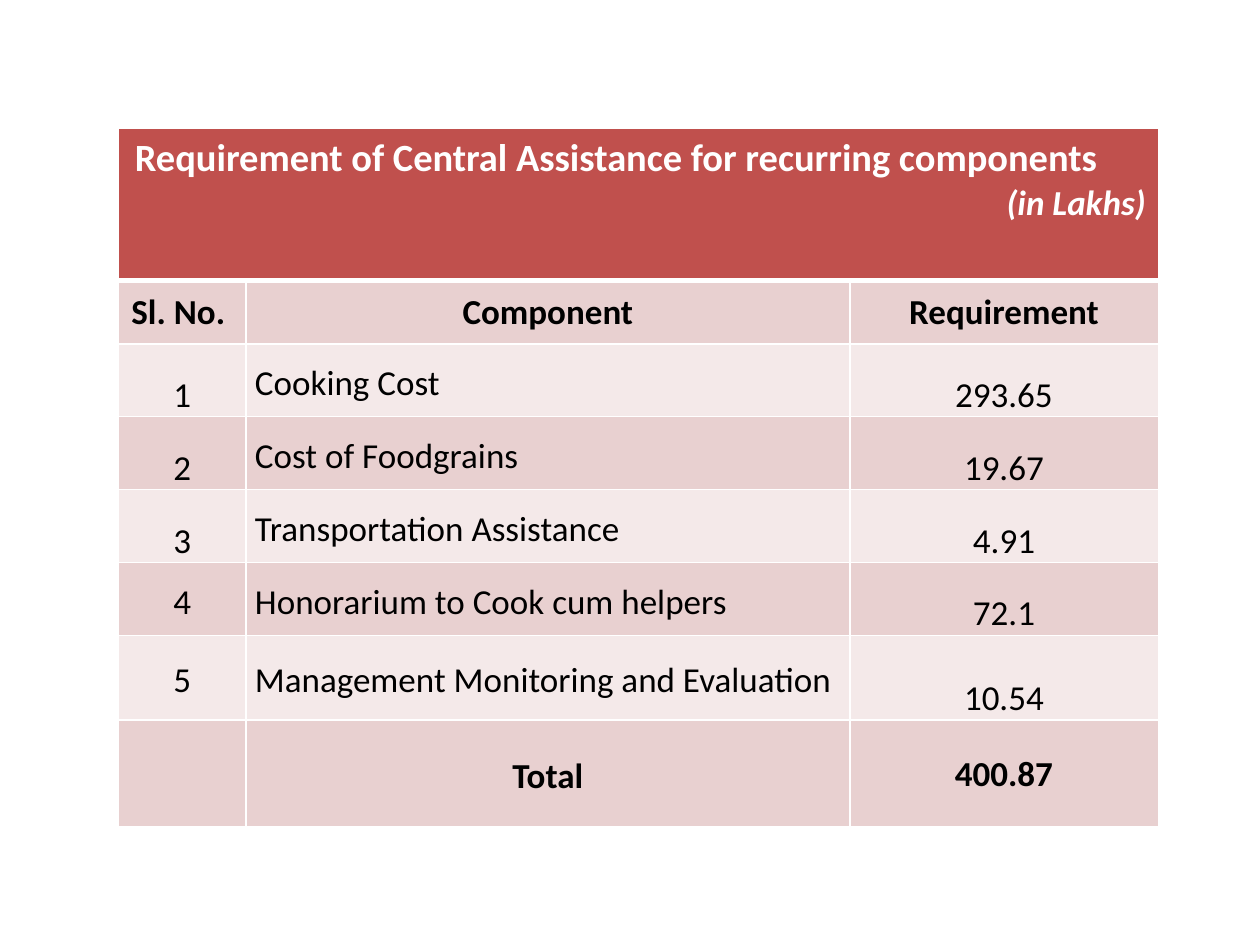
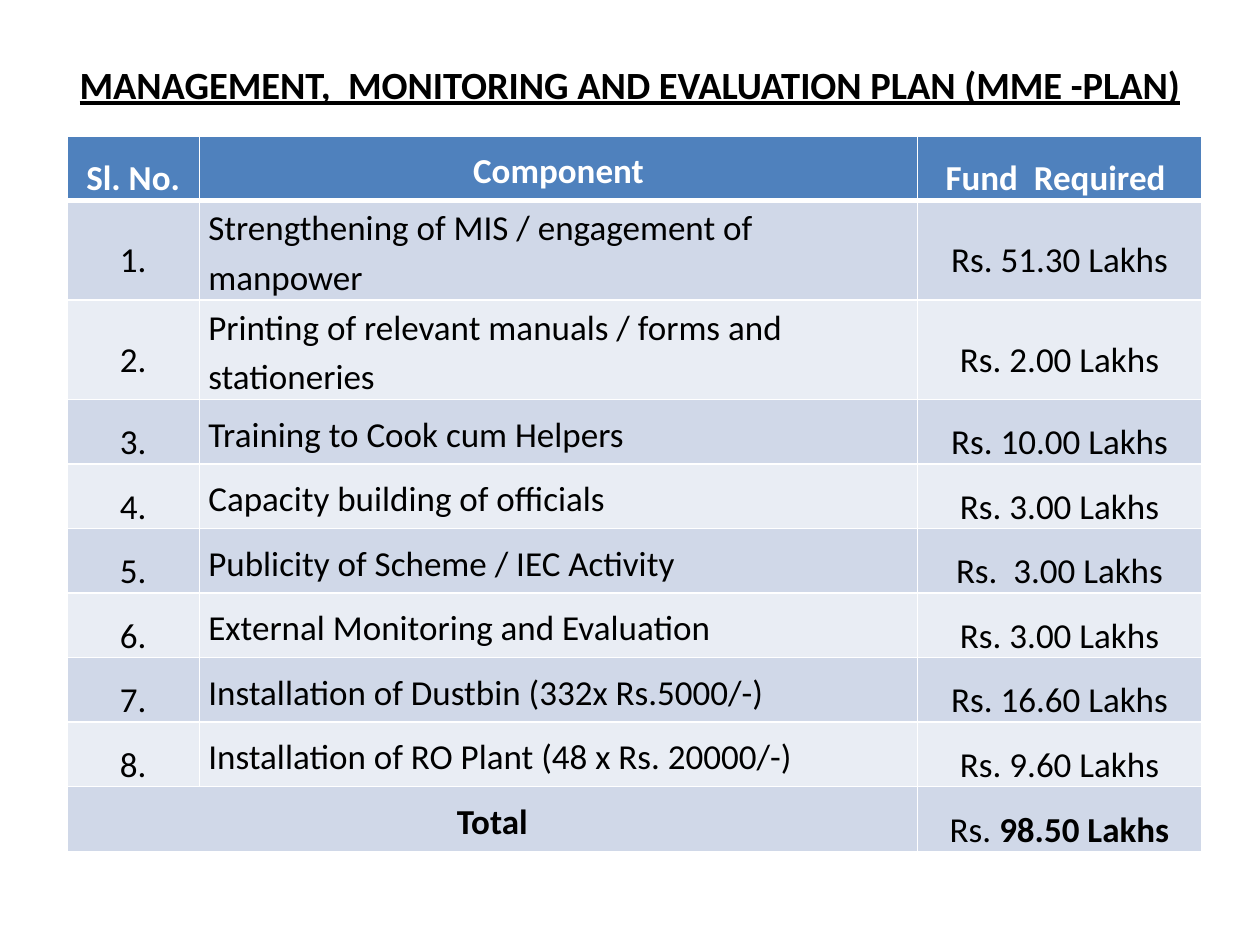
from lxml.etree import SubElement
from pptx import Presentation
from pptx.dml.color import RGBColor
from pptx.enum.text import MSO_ANCHOR as Anchor, PP_ALIGN as Align
from pptx.oxml.ns import qn
from pptx.util import Cm, Pt

FONT = "Calibri"
WHITE, BLACK = "FFFFFF", "000000"
TITLE_ONLY, BLANK = 5, 6

PLAIN = {"size": Pt(20), "bold": False}
BOLD = {"size": Pt(20), "bold": True}
HEADING = {"size": Pt(22), "bold": True}
UNIT = {"size": Pt(20), "bold": True, "italic": True}
TITLE = {"size": Pt(22), "bold": True, "underline": True}

SIDES = {"margin_left": Cm(0.18), "margin_right": Cm(0.18), "margin_top": 0, "margin_bottom": 0}
TIGHT = {"margin_left": Cm(0.03), "margin_right": Cm(0.03), "margin_top": Cm(0.03), "margin_bottom": 0}
BANNER = {"margin_left": Cm(0.33), "margin_right": Cm(0.25), "margin_top": Cm(0.13),
          "margin_bottom": Cm(0.13), "vertical_anchor": Anchor.TOP}
MIDDLE = {**SIDES, "vertical_anchor": Anchor.MIDDLE}
BOTTOM = {**SIDES, "vertical_anchor": Anchor.BOTTOM}
TIGHT_MIDDLE = {**TIGHT, "vertical_anchor": Anchor.MIDDLE}
TIGHT_BOTTOM = {**TIGHT, "vertical_anchor": Anchor.BOTTOM}

# Each column: (cell format, alignment, line spacing); "special" replaces it for single cells.
CENTRED = (MIDDLE, Align.CENTER, 1.0)
CENTRED_WIDE = (MIDDLE, Align.CENTER, 1.15)
LISTED = (MIDDLE, Align.LEFT, 1.15)
CENTRED_OPEN = (MIDDLE, Align.CENTER, 1.5)

ASSISTANCE = {
    "corner": (2.39, 2.59),
    "widths": [2.57, 12.17, 6.22],
    "heights": [3.07, 1.27] + [1.47] * 4 + [1.7, 2.16],
    "fills": ("C0504D", "E8D0D0", "F4E9E9"),
    "rows": [
        ("", "", ""),
        ("Sl. No. ", "Component", "Requirement"),
        ("1", "Cooking Cost", "293.65"),
        ("2", "Cost of Foodgrains", "19.67"),
        ("3", "Transportation Assistance", "4.91"),
        ("4", "Honorarium to Cook cum helpers", "72.1"),
        ("5", "Management Monitoring and Evaluation", "10.54"),
        ("", "Total", "400.87"),
    ],
    "bold_rows": (1, 7),
    "merge": (0, 0, 2),
    "columns": [(BOTTOM, Align.CENTER, 1.15), LISTED, (TIGHT_BOTTOM, Align.CENTER, 1.0)],
    "special": {
        (1, 0): CENTRED, (1, 1): CENTRED, (1, 2): CENTRED,
        (5, 0): CENTRED_WIDE, (6, 0): CENTRED_WIDE,
        (7, 1): CENTRED_WIDE, (7, 2): (TIGHT_MIDDLE, Align.CENTER, 1.0),
    },
}
ASSISTANCE_HEADING = [
    ("Requirement of Central Assistance for recurring components", HEADING, Align.LEFT),
    ("(in Lakhs)", UNIT, Align.RIGHT),
]

PLAN_TITLE = "MANAGEMENT,  MONITORING AND EVALUATION PLAN (MME -PLAN)"
PLAN = {
    "corner": (1.35, 2.74),
    "widths": [2.67, 14.48, 5.72],
    "heights": [1.3, 2.01, 2.01] + [1.3] * 6 + [1.32],
    "fills": ("4F81BD", "D0D8E8", "E9EDF4"),
    "rows": [
        ("Sl. No.", "Component", "Fund  Required "),
        ("1.", "Strengthening of MIS / engagement of manpower", "Rs. 51.30 Lakhs"),
        ("2.", "Printing of relevant manuals / forms and stationeries", "Rs. 2.00 Lakhs"),
        ("3.", "Training to Cook cum Helpers", "Rs. 10.00 Lakhs"),
        ("4.", "Capacity building of officials", "Rs. 3.00 Lakhs"),
        ("5.", "Publicity of Scheme / IEC Activity", "Rs.  3.00 Lakhs"),
        ("6.", "External Monitoring and Evaluation", "Rs. 3.00 Lakhs"),
        ("7.", "Installation of Dustbin (332x Rs.5000/-)", "Rs. 16.60 Lakhs"),
        ("8.", "Installation of RO Plant (48 x Rs. 20000/-)", "Rs. 9.60 Lakhs"),
        ("Total", "", [("Rs. ", PLAIN), ("98.50 Lakhs", BOLD)]),
    ],
    "bold_rows": (0, 9),
    "merge": (9, 0, 1),
    "columns": [CENTRED_OPEN, LISTED, CENTRED_OPEN],
    "special": {
        (0, 1): CENTRED_WIDE, (9, 0): CENTRED_WIDE, (9, 2): (BOTTOM, Align.CENTER, 1.15),
    },
}


def colour(value):
    return RGBColor.from_string(value)


def apply(target, values):
    for name, value in values.items():
        setattr(target, name, value)


def add_span(para, text, values, ink):
    span = para.add_run()
    span.text = text
    apply(span.font, {"name": FONT, **values})
    span.font.color.rgb = colour(ink)


def set_borders(cell, top, bottom):
    """Draw white cell edges; must run before the fill, which follows them in the XML."""
    properties = cell._tc.get_or_add_tcPr()
    for edge, points in (("L", 1), ("R", 1), ("T", top), ("B", bottom)):
        line = SubElement(properties, qn(f"a:ln{edge}"), w=str(Pt(points)))
        fill = SubElement(line, qn("a:solidFill"))
        SubElement(fill, qn("a:srgbClr"), val=WHITE)


def add_table(page, content):
    rows, widths, heights = content["rows"], content["widths"], content["heights"]
    left, top = content["corner"]
    table = page.shapes.add_table(len(rows), len(widths), Cm(left), Cm(top),
                                  Cm(sum(widths)), Cm(sum(heights))).table
    for column, width in zip(table.columns, widths):
        column.width = Cm(width)
    header_fill, *band_fills = content["fills"]
    for r, (row, height) in enumerate(zip(rows, heights)):
        table.rows[r].height = Cm(height)
        fill = band_fills[(r - 1) % 2] if r else header_fill
        values = BOLD if r in content["bold_rows"] else PLAIN
        for c, text in enumerate(row):
            cell = table.cell(r, c)
            set_borders(cell, top=3 if r == 1 else 1, bottom=3 if r == 0 else 1)
            cell.fill.solid()
            cell.fill.fore_color.rgb = colour(fill)
            layout, align, spacing = content["special"].get((r, c), content["columns"][c])
            apply(cell, layout)
            para = cell.text_frame.paragraphs[0]
            apply(para, {"alignment": align, "line_spacing": spacing})
            spans = [(text, values)] if isinstance(text, str) else text
            for words, span_values in spans:
                if words:
                    add_span(para, words, span_values, BLACK if r else WHITE)
    r, first, last = content["merge"]
    table.cell(r, first).merge(table.cell(r, last))
    return table


def add_assistance_page(deck):
    page = deck.slides.add_slide(deck.slide_layouts[BLANK])
    banner = add_table(page, ASSISTANCE).cell(0, 0)
    apply(banner, BANNER)
    frame = banner.text_frame
    for index, (text, values, align) in enumerate(ASSISTANCE_HEADING):
        para = frame.add_paragraph() if index else frame.paragraphs[0]
        apply(para, {"alignment": align, "line_spacing": 1.0})
        add_span(para, text, values, WHITE)


def add_plan_page(deck):
    page = deck.slides.add_slide(deck.slide_layouts[TITLE_ONLY])
    title = page.shapes.title
    apply(title, {"left": Cm(1.27), "top": Cm(1.07), "width": Cm(22.86), "height": Cm(1.24)})
    title.text_frame.vertical_anchor = Anchor.MIDDLE
    para = title.text_frame.paragraphs[0]
    para.alignment = Align.CENTER
    add_span(para, PLAN_TITLE, TITLE, BLACK)
    add_table(page, PLAN)


def main():
    deck = Presentation()
    apply(deck, {"slide_width": Cm(25.4), "slide_height": Cm(19.05)})
    add_assistance_page(deck)
    add_plan_page(deck)
    deck.save("out.pptx")


if __name__ == "__main__":
    main()
